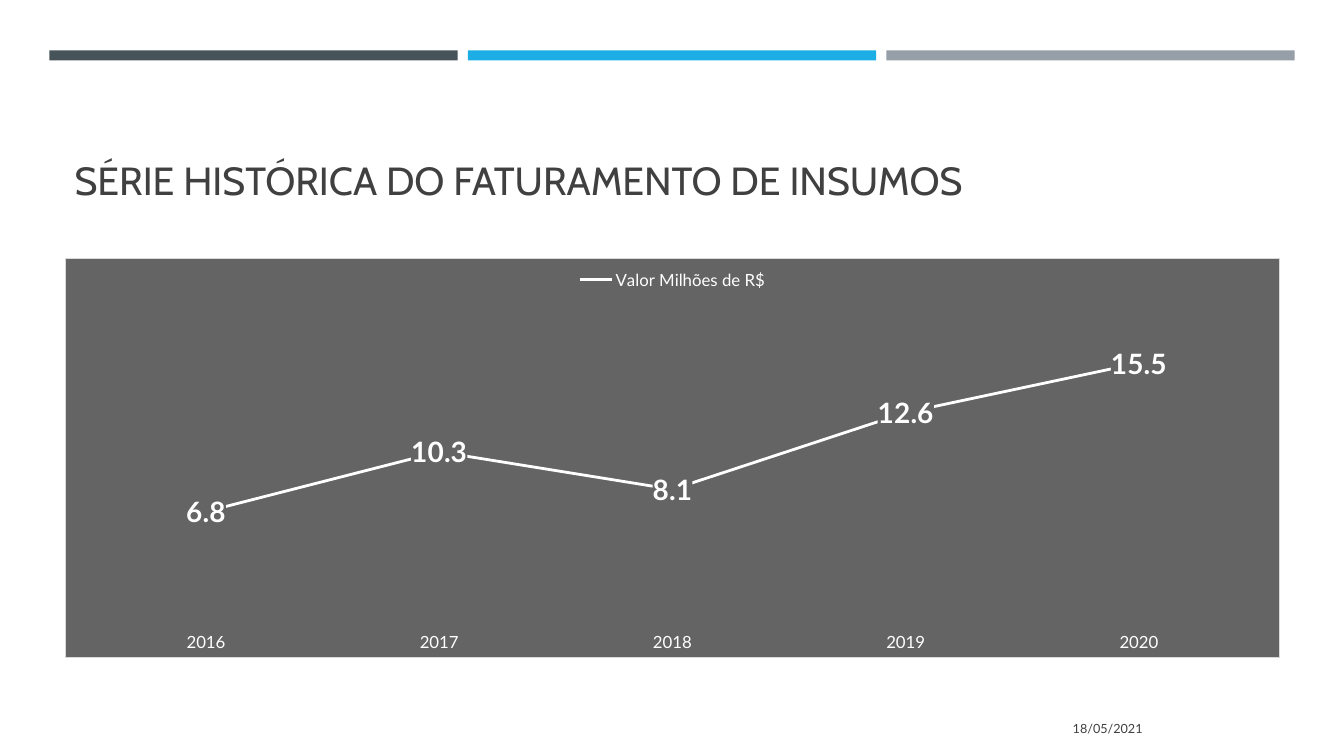
from lxml import etree
from pptx import Presentation
from pptx.chart.data import CategoryChartData
from pptx.dml.color import RGBColor
from pptx.enum.chart import XL_CHART_TYPE, XL_LABEL_POSITION, XL_LEGEND_POSITION, XL_TICK_MARK
from pptx.enum.shapes import MSO_SHAPE
from pptx.enum.text import MSO_ANCHOR, PP_ALIGN
from pptx.oxml import parse_xml
from pptx.util import Inches, Pt

LINE_CHART = XL_CHART_TYPE.LINE
LABEL_CENTER = XL_LABEL_POSITION.CENTER
LEGEND_TOP = XL_LEGEND_POSITION.TOP
TICK_NONE = XL_TICK_MARK.NONE
RECTANGLE = MSO_SHAPE.RECTANGLE
BOTTOM, MIDDLE = MSO_ANCHOR.BOTTOM, MSO_ANCHOR.MIDDLE
LEFT, RIGHT = PP_ALIGN.LEFT, PP_ALIGN.RIGHT

CHART_NS = "http://schemas.openxmlformats.org/drawingml/2006/chart"
DRAWING_NS = "http://schemas.openxmlformats.org/drawingml/2006/main"
NAMESPACES = f'xmlns:c="{CHART_NS}" xmlns:a="{DRAWING_NS}"'

TITLE_ONLY = 5
CONTENT_LEFT, CONTENT_WIDTH = 0.64, 12.06
BAR_LEFT, BAR_TOP, BAR_WIDTH, BAR_HEIGHT, BAR_GAP = 0.49, 0.5, 4.05, 0.1, 0.1
BAR_COLORS = ("465359", "1CADE4", "969FA7")
TEXT_COLOR, WHITE, PANEL_COLOR, BORDER_COLOR = "404040", "FFFFFF", "646464", "D9D9D9"
REVENUE = {"2016": 6.8, "2017": 10.3, "2018": 8.1, "2019": 12.6, "2020": 15.5}
PLOT_SHARES = {"x": 0.02, "y": 0.155, "w": 0.96, "h": 0.77}


def rgb(color):
    return RGBColor.from_string(color)


def box(left, top, width, height):
    return [Inches(length) for length in (left, top, width, height)]


def set_font(font, name, size, color, bold=False):
    font.name = name
    font.size = Pt(size)
    font.bold = bold
    font.color.rgb = rgb(color)


def write_text(shape, text, name, size, anchor, alignment):
    frame = shape.text_frame
    frame.word_wrap = True
    frame.vertical_anchor = anchor
    frame.text = text
    paragraph = frame.paragraphs[0]
    paragraph.alignment = alignment
    set_font(paragraph.font, name, size, TEXT_COLOR)


def add_bars(slide):
    for column, color in enumerate(BAR_COLORS):
        left = BAR_LEFT + column * (BAR_WIDTH + BAR_GAP)
        bar = slide.shapes.add_shape(RECTANGLE, *box(left, BAR_TOP, BAR_WIDTH, BAR_HEIGHT))
        bar.shadow.inherit = False
        bar.fill.solid()
        bar.fill.fore_color.rgb = rgb(color)
        bar.line.fill.background()


def add_title(slide, text):
    title = slide.shapes.title
    title.left, title.top, title.width, title.height = box(CONTENT_LEFT, 0.77, CONTENT_WIDTH, 1.3)
    write_text(title, text, "Cabin", 28, BOTTOM, LEFT)


def add_date(slide, text):
    date = slide.shapes.add_textbox(*box(8.32, 7.03, 3.11, 0.4))
    write_text(date, text, "Lato", 9, MIDDLE, RIGHT)


def area_format(line=""):
    return parse_xml(
        f'<c:spPr {NAMESPACES}><a:solidFill><a:srgbClr val="{PANEL_COLOR}"/></a:solidFill>{line}</c:spPr>'
    )


def format_areas(chart):
    root = chart.element
    border = (
        f'<a:ln w="{Pt(0.75)}"><a:solidFill><a:srgbClr val="{BORDER_COLOR}"/></a:solidFill></a:ln>'
    )
    root.find(f"{{{CHART_NS}}}chart").addnext(area_format(border))
    labels = next(root.iter(f"{{{CHART_NS}}}dLbls"))
    labels.find(f"{{{CHART_NS}}}txPr").addprevious(area_format())


def place_plot(chart):
    plot_area = next(chart.element.iter(f"{{{CHART_NS}}}plotArea"))
    for layout in plot_area.findall(f"{{{CHART_NS}}}layout"):
        plot_area.remove(layout)
    layout = parse_xml(f"<c:layout {NAMESPACES}><c:manualLayout/></c:layout>")
    settings = {"layoutTarget": "inner", "xMode": "edge", "yMode": "edge", **PLOT_SHARES}
    for tag, value in settings.items():
        etree.SubElement(layout[0], f"{{{CHART_NS}}}{tag}", val=str(value))
    plot_area.insert(0, layout)


def format_axes(chart):
    years = chart.category_axis
    years.major_tick_mark = TICK_NONE
    years.minor_tick_mark = TICK_NONE
    years.format.line.fill.background()
    set_font(years.tick_labels.font, "Lato", 12, WHITE)
    values = chart.value_axis
    values.minimum_scale, values.maximum_scale = 0, 18
    values.has_major_gridlines = False
    values.visible = False


def format_series(series):
    series.smooth = False
    series.format.line.color.rgb = rgb(WHITE)
    series.format.line.width = Pt(2)
    labels = series.data_labels
    labels.show_value = True
    labels.number_format = "0.0"
    labels.number_format_is_linked = False
    labels.position = LABEL_CENTER
    set_font(labels.font, "Lato", 20, WHITE, bold=True)


def add_revenue_chart(slide):
    data = CategoryChartData()
    data.categories = list(REVENUE)
    data.add_series("Valor Milhões de R$", list(REVENUE.values()))
    frame = slide.shapes.add_chart(LINE_CHART, *box(CONTENT_LEFT, 2.56, CONTENT_WIDTH, 3.97), data)
    chart = frame.chart
    chart.has_title = False
    set_font(chart.font, "Lato", 10, "000000")
    chart.has_legend = True
    chart.legend.position = LEGEND_TOP
    chart.legend.include_in_layout = False
    set_font(chart.legend.font, "Lato", 12, WHITE)
    plot = chart.plots[0]
    plot.vary_by_categories = False
    format_series(plot.series[0])
    format_axes(chart)
    format_areas(chart)
    place_plot(chart)


def main():
    presentation = Presentation()
    presentation.slide_width, presentation.slide_height = Inches(13.33), Inches(7.5)
    slide = presentation.slides.add_slide(presentation.slide_layouts[TITLE_ONLY])
    add_bars(slide)
    add_title(slide, "SÉRIE HISTÓRICA DO FATURAMENTO DE INSUMOS")
    add_date(slide, "18/05/2021")
    add_revenue_chart(slide)
    presentation.save("out.pptx")


if __name__ == "__main__":
    main()
